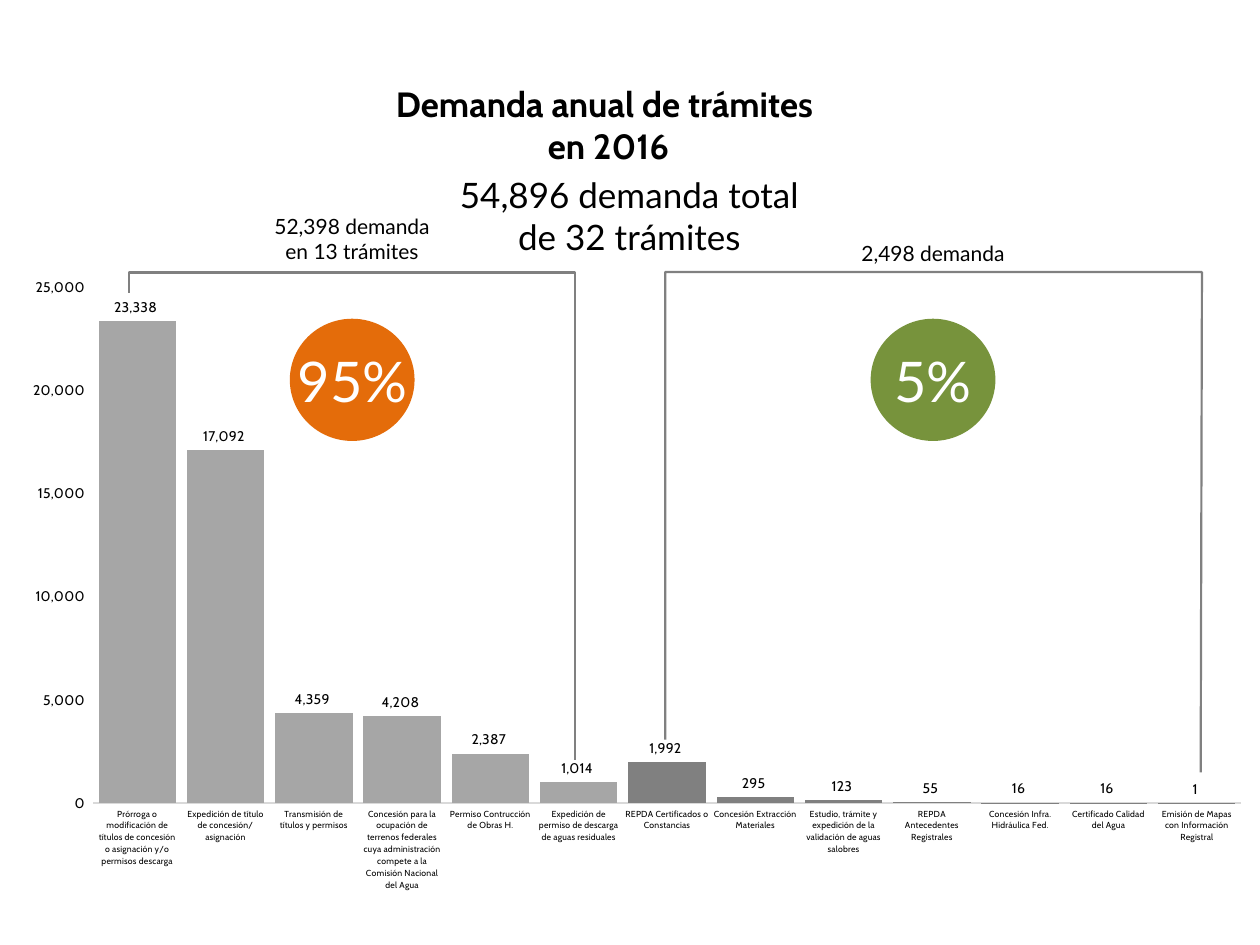
from lxml import etree
from pptx import Presentation
from pptx import util as u
from pptx.chart.data import CategoryChartData
from pptx.dml.color import RGBColor
from pptx.enum import chart as ch, shapes, text
from pptx.oxml import ns

BLACK = RGBColor(0x00, 0x00, 0x00)
WHITE = RGBColor(0xFF, 0xFF, 0xFF)
LIGHT_GREY = RGBColor(0xA6, 0xA6, 0xA6)
DARK_GREY = RGBColor(0x80, 0x80, 0x80)
AXIS_GREY = RGBColor(0xD9, 0xD9, 0xD9)
ORANGE = RGBColor(0xE4, 0x6C, 0x0A)
GREEN = RGBColor(0x77, 0x93, 0x3C)

NUMBERS = "#,##0_ ;\\-#,##0\\ "
MAIN_COUNT = 6  # leading procedures, drawn in light grey
DEMAND = [
    ("Prórroga o modificación de títulos de concesión o asignación y/o permisos descarga", 23338),
    ("Expedición de título de concesión/asignación", 17092),
    ("Transmisión de títulos y permisos", 4359),
    ("Concesión para la ocupación de terrenos federales cuya administración "
     "compete a la Comisión Nacional del Agua", 4208),
    ("Permiso Contrucción de Obras H.", 2387),
    ("Expedición de permiso de descarga de aguas residuales", 1014),
    ("REPDA Certificados o Constancias", 1992),
    ("Concesión Extracción Materiales", 295),
    ("Estudio, trámite y expedición de la validación de aguas salobres", 123),
    ("REPDA Antecedentes Registrales", 55),
    ("Concesión Infra. Hidráulica Fed.", 16),
    ("Certificado Calidad del Agua", 16),
    ("Emisión de Mapas con Información Registral", 1),
]


class DemandSlide:
    heading_font = "Cabin"
    body_font = "Lato"

    def __init__(self, prs):
        self.slide = prs.slides.add_slide(prs.slide_layouts[5])
        self.shapes = self.slide.shapes

    def style(self, font, size, color, name):
        font.size, font.name = u.Pt(size), name
        font.color.rgb = color

    def title(self, words, left, top, width, height):
        title = self.shapes.title
        title.left, title.top = u.Inches(left), u.Inches(top)
        title.width, title.height = u.Inches(width), u.Inches(height)
        frame = title.text_frame
        frame.text = words
        frame.auto_size = text.MSO_AUTO_SIZE.NONE
        frame.vertical_anchor = text.MSO_ANCHOR.MIDDLE
        heading = frame.paragraphs[0]
        heading.alignment = text.PP_ALIGN.CENTER
        heading.line_spacing = 1.0
        self.style(heading.font, 20, BLACK, self.heading_font)
        heading.font.bold = True

    def label(self, words, left, top, width, height, size, color=BLACK,
              anchor=text.MSO_ANCHOR.TOP):
        box = self.shapes.add_textbox(*map(u.Inches, (left, top, width, height)))
        frame = box.text_frame
        frame.word_wrap = True
        frame.vertical_anchor = anchor
        frame.text = words
        for line in frame.paragraphs:
            line.alignment = text.PP_ALIGN.CENTER
            self.style(line.font, size, color, self.body_font)

    def circle(self, left, color):
        disc = self.shapes.add_shape(shapes.MSO_SHAPE.OVAL, u.Inches(left), u.Inches(2.53),
                                     u.Inches(0.99), u.Inches(0.97))
        disc.shadow.inherit = False
        disc.fill.solid()
        disc.fill.fore_color.rgb = color
        disc.line.fill.background()

    def outline(self, line):
        line.color.rgb = DARK_GREY
        line.width = u.Pt(1.25)

    def elbow_bracket(self, begin, end, bend):
        """Elbow connector turned a quarter, so that it opens downwards."""
        bracket = self.shapes.add_connector(shapes.MSO_CONNECTOR.ELBOW,
                                            *map(u.Inches, begin + end))
        self.outline(bracket.line)
        props = bracket._element.spPr
        props.find(ns.qn("a:xfrm")).set("rot", str(270 * 60000))
        guides = props.find(ns.qn("a:prstGeom")).get_or_add_avLst()
        etree.SubElement(guides, ns.qn("a:gd"), name="adj1", fmla=f"val {bend}")
        etree.SubElement(props, ns.qn("a:effectLst"))

    def open_bracket(self, points):
        corners = [(u.Inches(x), u.Inches(y)) for x, y in points]
        builder = self.shapes.build_freeform(*corners[0])
        builder.add_line_segments(corners[1:], close=False)
        bracket = builder.convert_to_shape()
        bracket.shadow.inherit = False
        bracket.fill.background()
        self.outline(bracket.line)

    def column_chart(self, rows, left, top, width, height):
        data = CategoryChartData()
        data.categories = [name for name, _ in rows]
        data.add_series("Series 1", [value for _, value in rows])
        chart = self.shapes.add_chart(ch.XL_CHART_TYPE.COLUMN_CLUSTERED,
                                      *map(u.Inches, (left, top, width, height)), data).chart
        chart.has_legend = chart.has_title = False
        self.style(chart.font, 8, BLACK, self.heading_font)

        # Axes
        names, amounts = chart.category_axis, chart.value_axis
        for axis, size in ((names, 5), (amounts, 8)):
            axis.major_tick_mark = axis.minor_tick_mark = ch.XL_TICK_MARK.NONE
            axis.has_major_gridlines = False
            self.style(axis.tick_labels.font, size, BLACK, self.heading_font)
        names.format.line.color.rgb = AXIS_GREY
        names.format.line.width = u.Pt(0.75)
        amounts.format.line.fill.background()
        amounts.minimum_scale, amounts.maximum_scale, amounts.major_unit = 0, 25000, 5000

        # Columns and their values
        plot = chart.plots[0]
        plot.gap_width, plot.overlap = 14, -27
        plot.vary_by_categories = False
        series = plot.series[0]
        series.format.fill.solid()
        series.format.fill.fore_color.rgb = DARK_GREY
        for index in range(MAIN_COUNT):
            fill = series.points[index].format.fill
            fill.solid()
            fill.fore_color.rgb = LIGHT_GREY
        values = series.data_labels
        values.show_value = True
        values.position = ch.XL_LABEL_POSITION.OUTSIDE_END
        self.style(values.font, 8, BLACK, self.heading_font)
        for numbers in (values, amounts.tick_labels):
            numbers.number_format = NUMBERS
            numbers.number_format_is_linked = False

        # Fixed plot area, as shares of the chart
        area = chart._chartSpace.chart.plotArea
        for old in area.findall(ns.qn("c:layout")):
            area.remove(old)
        layout = etree.Element(ns.qn("c:layout"))
        area.insert(0, layout)
        manual = etree.SubElement(layout, ns.qn("c:manualLayout"))
        for tag, val in (("layoutTarget", "inner"), ("xMode", "edge"), ("yMode", "edge"),
                         ("x", "0.068"), ("y", "0.035"), ("w", "0.911"), ("h", "0.808")):
            etree.SubElement(manual, ns.qn(f"c:{tag}"), val=val)


def main():
    prs = Presentation()
    prs.slide_width, prs.slide_height = u.Inches(10), u.Inches(7.5)
    page = DemandSlide(prs)

    page.column_chart(DEMAND, 0.06, 2.1, 10, 5.07)

    # Heading and totals
    page.title("Demanda anual de trámites \ven 2016", 1.85, 0.81, 5.96, 0.35)
    page.label("52,398 demanda\nen 13 trámites", 1.98, 1.68, 1.63, 0.43, 12,
               anchor=text.MSO_ANCHOR.MIDDLE)
    page.label("54,896 demanda total\nde 32 trámites", 3.49, 1.33, 3.01, 0.44, 20)
    page.label("2,498 demanda", 6.67, 1.86, 1.47, 0.25, 12)

    # Brackets over the two groups
    page.elbow_bracket((4.65, 2.41), (0.94, 5.95), -4400)
    page.open_bracket([(5.28, 5.87), (5.28, 2.16), (9.54, 2.16), (9.53, 6.13)])

    # Share of each group
    page.circle(2.3, ORANGE)
    page.circle(6.91, GREEN)
    page.label("95%", 2.24, 2.7, 1.12, 0.43, 32, WHITE)
    page.label("5%", 6.91, 2.7, 0.99, 0.43, 32, WHITE)

    prs.save("out.pptx")


if __name__ == "__main__":
    main()
